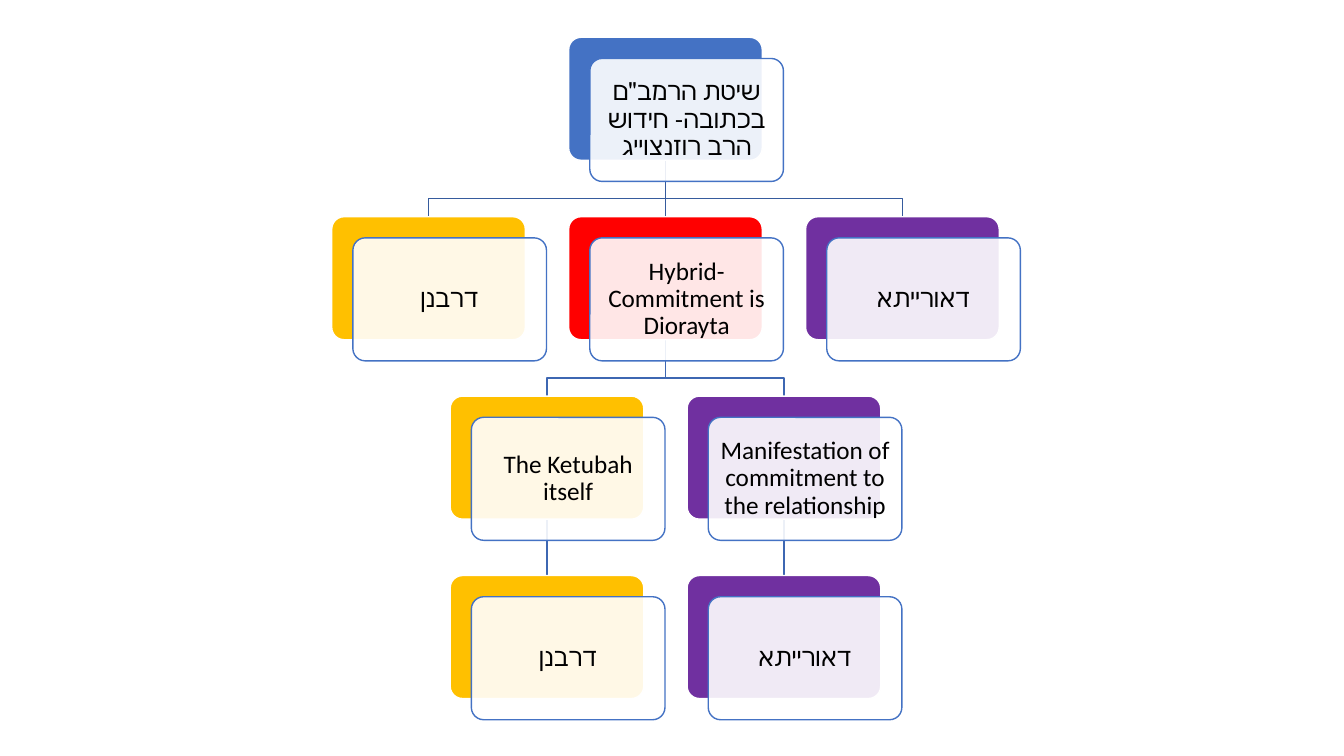
from dataclasses import dataclass
from typing import Optional

from lxml.etree import SubElement
from pptx import Presentation
from pptx.dml.color import RGBColor
from pptx.enum.shapes import MSO_CONNECTOR, MSO_SHAPE
from pptx.enum.text import MSO_ANCHOR, PP_ALIGN
from pptx.oxml.ns import qn
from pptx.shapes.autoshape import Shape
from pptx.slide import Slide
from pptx.util import Inches, Pt

BLUE = RGBColor(0x44, 0x72, 0xC4)
PURPLE = RGBColor(0x70, 0x30, 0xA0)
RED = RGBColor(0xFF, 0x00, 0x00)
GOLD = RGBColor(0xFF, 0xC0, 0x00)
WHITE = RGBColor(0xFF, 0xFF, 0xFF)
BLACK = RGBColor(0x00, 0x00, 0x00)
UPPER_LINK = RGBColor(0x36, 0x5B, 0x9D)
LOWER_LINK = RGBColor(0x3E, 0x67, 0xB2)

CARD_W, CARD_H = 1.92, 1.22
CENTRE_LEFT, TOP = 5.64, 0.37
COL_STEP, ROW_STEP = 2.35, 1.78
OFFSET = 0.21
BEND = 0.38


@dataclass(frozen=True)
class Node:
    text: str
    col: float
    row: int
    color: RGBColor
    parent: Optional["Node"] = None

    @property
    def left(self) -> float:
        return CENTRE_LEFT + self.col * COL_STEP

    @property
    def top(self) -> float:
        return TOP + self.row * ROW_STEP

    @property
    def centre(self) -> float:
        return self.left + CARD_W / 2


ROOT = Node('שיטת הרמב"ם בכתובה- חידוש הרב רוזנצוייג', 0, 0, BLUE)
HYBRID = Node("Hybrid- Commitment is Diorayta", 0, 1, RED, ROOT)
MANIFESTATION = Node("Manifestation of commitment to the relationship", 0.5, 2, PURPLE, HYBRID)
KETUBAH = Node("The Ketubah itself", -0.5, 2, GOLD, HYBRID)
NODES = [
    ROOT,
    Node("דאורייתא", 1, 1, PURPLE, ROOT),
    HYBRID,
    MANIFESTATION,
    Node("דאורייתא", 0.5, 3, PURPLE, MANIFESTATION),
    KETUBAH,
    Node("דרבנן", -0.5, 3, GOLD, KETUBAH),
    Node("דרבנן", -1, 1, GOLD, ROOT),
]


def add_link(s: Slide, parent: Node, child: Node) -> None:
    """Join a parent's bottom to a child's top, bending when they are not aligned."""
    x1, y1 = Inches(parent.centre), Inches(parent.top + CARD_H)
    x2, y2 = Inches(child.centre), Inches(child.top)
    if x1 == x2:
        link = s.shapes.add_connector(MSO_CONNECTOR.STRAIGHT, x1, y1, x2, y2)
        SubElement(link._element.spPr, qn("a:effectLst"))
    else:
        bend = Inches(parent.top + CARD_H + BEND)
        builder = s.shapes.build_freeform(x1, y1)
        builder.add_line_segments([(x1, bend), (x2, bend), (x2, y2)], close=False)
        link = builder.convert_to_shape()
        link.shadow.inherit = False
        link.fill.background()
    link.line.color.rgb = UPPER_LINK if parent.row == 0 else LOWER_LINK
    link.line.width = Pt(1)


def add_card(s: Slide, left: float, top: float, fill: RGBColor, line: RGBColor) -> Shape:
    sp = s.shapes.add_shape(MSO_SHAPE.ROUNDED_RECTANGLE, Inches(left), Inches(top),
                            Inches(CARD_W), Inches(CARD_H))
    sp.adjustments[0] = 0.1
    sp.shadow.inherit = False
    sp.fill.solid()
    sp.fill.fore_color.rgb = fill
    sp.line.color.rgb = line
    sp.line.width = Pt(1)
    return sp


def set_opacity(sp: Shape, percent: int) -> None:
    color = sp._element.spPr.find(qn("a:solidFill")).find(qn("a:srgbClr"))
    SubElement(color, qn("a:alpha"), val=str(percent * 1000))


def write_label(sp: Shape, text: str) -> None:
    tf = sp.text_frame
    tf.word_wrap = True
    tf.vertical_anchor = MSO_ANCHOR.MIDDLE
    tf.margin_left = tf.margin_right = tf.margin_top = tf.margin_bottom = Inches(0.07)
    p = tf.paragraphs[0]
    p.alignment = PP_ALIGN.CENTER
    p.line_spacing = 0.9
    p.space_after = Pt(6.3)
    p._p.get_or_add_pPr().set("rtl", "1")
    r = p.add_run()
    r.text = text
    r.font.name = "Calibri"
    r.font.size = Pt(18)
    r.font.color.rgb = BLACK


def add_node(s: Slide, node: Node) -> None:
    """Draw a coloured card with a translucent labelled card over it."""
    add_card(s, node.left, node.top, node.color, WHITE)
    front = add_card(s, node.left + OFFSET, node.top + OFFSET, WHITE, BLUE)
    set_opacity(front, 90)
    write_label(front, node.text)


def main() -> None:
    prs = Presentation()
    prs.slide_width, prs.slide_height = Inches(13.33), Inches(7.5)
    s = prs.slides.add_slide(prs.slide_layouts[6])
    for node in NODES:
        if node.parent:
            add_link(s, node.parent, node)
    for node in NODES:
        add_node(s, node)
    prs.save("out.pptx")


if __name__ == "__main__":
    main()
